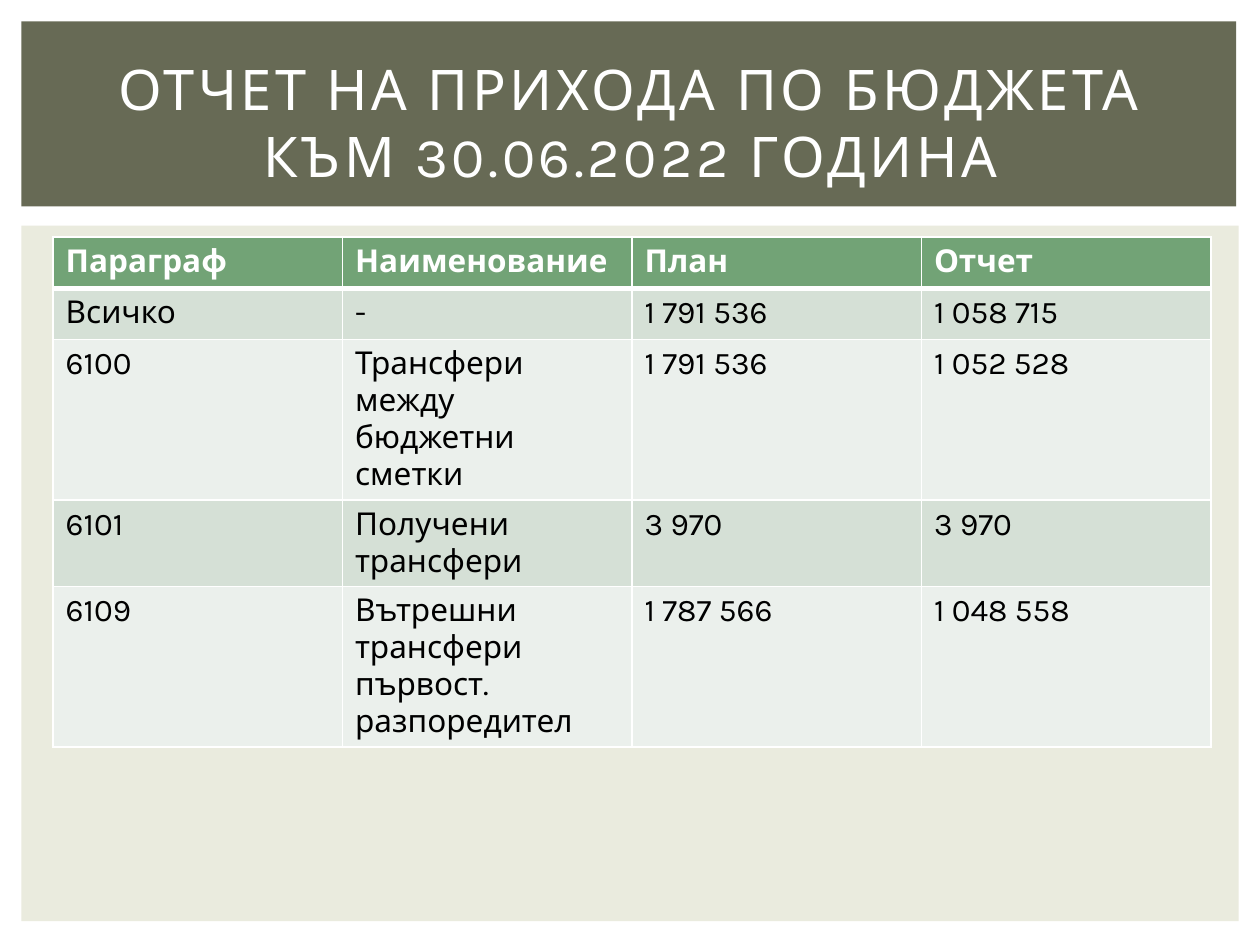
from lxml.etree import SubElement as Sub
from pptx import Presentation
from pptx.dml.color import RGBColor as Rgb
from pptx.enum.shapes import MSO_SHAPE as Shape
from pptx.enum.text import MSO_ANCHOR as Anchor, PP_ALIGN as Align
from pptx.oxml.ns import qn
from pptx.util import Cm, Pt

INK = {"page": "EAEBDE", "band": "676A55", "head": "72A376", "odd": "D5E0D6",
       "even": "EBF0EC", "white": "FFFFFF", "black": "000000"}
FONT = "Karla"
TITLE = "ОТЧЕТ НА ПРИХОДА ПО БЮДЖЕТА КЪМ 30.06.2022 ГОДИНА"
ROWS = [
    ("Параграф", "Наименование", "План", "Отчет"),
    ("Всичко", "-", "1 791 536", "1 058 715"),
    ("6100", "Трансфери между бюджетни сметки", "1 791 536", "1 052 528"),
    ("6101", "Получени трансфери", "3 970", "3 970"),
    ("6109", "Вътрешни трансфери първост. разпоредител", "1 787 566", "1 048 558"),
]


def paint(fill, name):
    """Fill with a named colour."""
    fill.solid()
    fill.fore_color.rgb = Rgb.from_string(INK[name])


def write(para, text, size, name, bold=False):
    """Add one styled run and return it."""
    run = para.add_run()
    run.text = text
    font = run.font
    font.name, font.size, font.bold = FONT, Pt(size), bold
    font.color.rgb = Rgb.from_string(INK[name])
    return run


def panel(slide, box, name):
    """Draw a plain filled rectangle."""
    rect = slide.shapes.add_shape(Shape.RECTANGLE, *map(Cm, box))
    rect.shadow.inherit = False
    paint(rect.fill, name)
    rect.line.fill.background()


def banner(slide, box):
    """Draw the title band with its centred title."""
    x, y, w, h = box
    panel(slide, box, "band")
    area = (x + 0.64, y + 0.56, w - 1.2, h - 0.81)
    frame = slide.shapes.add_textbox(*map(Cm, area)).text_frame
    frame.word_wrap = True
    frame.vertical_anchor = Anchor.MIDDLE
    para = frame.paragraphs[0]
    para.alignment = Align.CENTER
    run = write(para, TITLE, 32, "white")
    run.font._element.set("spc", "200")


def edge(cell, side, width):
    """Draw one white cell border."""
    props = cell._tc.get_or_add_tcPr()
    line = Sub(props, qn("a:ln" + side), w=str(Pt(width)))
    fill = Sub(line, qn("a:solidFill"))
    Sub(fill, qn("a:srgbClr"), val=INK["white"])


def budget(slide, box):
    """Build the banded budget table."""
    x, y, w, h = box
    area = (x + 0.64, y + 0.23, w - 1.2, 1.03 * len(ROWS))
    table = slide.shapes.add_table(len(ROWS), len(ROWS[0]), *map(Cm, area)).table
    for i, row in enumerate(ROWS):
        back = "head" if i == 0 else "odd" if i % 2 else "even"
        for j, text in enumerate(row):
            cell = table.cell(i, j)
            for side in "LRTB":
                thick = (i, side) in ((0, "B"), (1, "T"))
                edge(cell, side, 3 if thick else 1)
            paint(cell.fill, back)
            write(cell.text_frame.paragraphs[0], text, 18,
                  "black" if i else "white", i == 0)


def body(slide, box):
    """Draw the page panel and the table on it."""
    panel(slide, box, "page")
    budget(slide, box)


def main():
    """Build and save the slide."""
    deck = Presentation()
    deck.slide_width, deck.slide_height = Cm(25.4), Cm(19.05)
    slide = deck.slides.add_slide(deck.slide_layouts[6])
    body(slide, (0.43, 4.55, 24.54, 14.02))
    banner(slide, (0.43, 0.43, 24.49, 3.73))
    deck.save("out.pptx")


if __name__ == "__main__":
    main()
